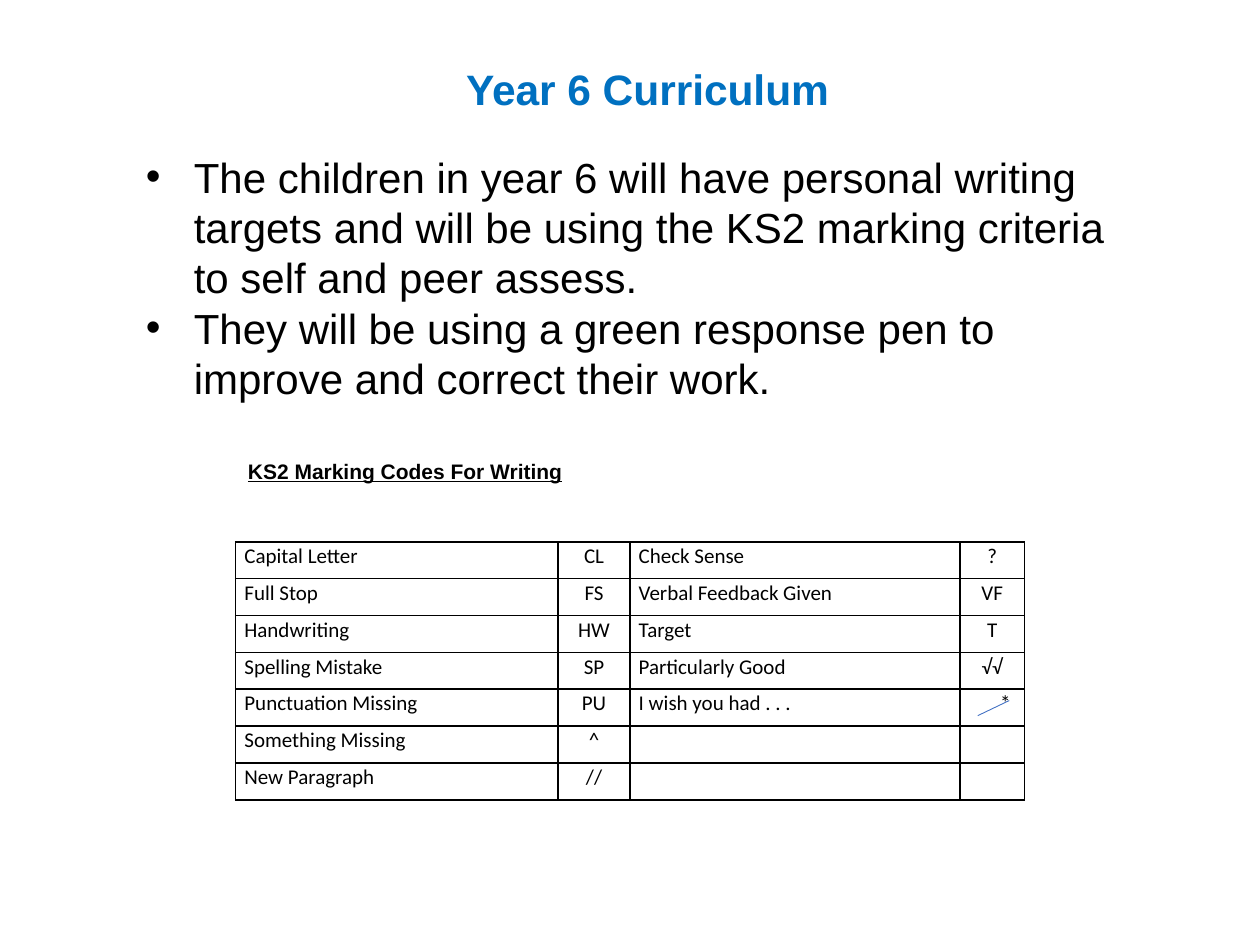
from pptx import Presentation
from pptx.dml.color import RGBColor
from pptx.enum.shapes import MSO_CONNECTOR
from pptx.enum.text import MSO_ANCHOR, PP_ALIGN
from pptx.oxml.ns import qn
from pptx.util import Inches, Pt
from lxml import etree

STRAIGHT = MSO_CONNECTOR.STRAIGHT
TOP = MSO_ANCHOR.TOP
LEFT, CENTER, RIGHT = PP_ALIGN.LEFT, PP_ALIGN.CENTER, PP_ALIGN.RIGHT

COLORS = {"title": "0070C0", "text": "000000", "border": "000000", "stroke": "4472C4"}

BULLETS = [
    "The children in year 6 will have personal writing targets and will be using "
    "the KS2 marking criteria to self and peer assess.",
    "They will be using a green response pen to improve and correct their work.",
]
MARKING_CODES = [
    ("Capital Letter", "CL", "Check Sense", "?"),
    ("Full Stop", "FS", "Verbal Feedback Given", "VF"),
    ("Handwriting", "HW", "Target", "T"),
    ("Spelling Mistake", "SP", "Particularly Good", "√√"),
    ("Punctuation Missing", "PU", "I wish you had . . .", "*"),
    ("Something Missing", "^", "", ""),
    ("New Paragraph", "//", "", ""),
]
COLUMN_WIDTHS = [2.56, 0.57, 2.62, 0.51]


def write(paragraph, text, size=12, font="Arial", color="text", bold=False,
          underline=False, align=LEFT, line_spacing=1.0):
    paragraph.alignment = align
    paragraph.line_spacing = line_spacing
    if not text:
        paragraph._p.get_or_add_endParaRPr().set("sz", str(size * 100))
        return
    run = paragraph.add_run()
    run.text = text
    run.font.size = Pt(size)
    run.font.name = font
    run.font.bold = bold
    run.font.underline = underline
    run.font.color.rgb = RGBColor.from_string(COLORS[color])


class SlideBuilder:
    def __init__(self, slide):
        self.slide = slide

    def text(self, box, paragraphs, bullet=False, **style):
        shape = self.slide.shapes.add_textbox(*map(Inches, box))
        frame = shape.text_frame
        frame.word_wrap = True
        frame.vertical_anchor = TOP
        for index, text in enumerate(paragraphs):
            paragraph = frame.add_paragraph() if index else frame.paragraphs[0]
            write(paragraph, text, **style)
            if bullet:
                self.bullet(paragraph)

    def bullet(self, paragraph, indent=0.38):
        properties = paragraph._p.get_or_add_pPr()
        properties.set("marL", str(Inches(indent)))
        properties.set("indent", str(-Inches(indent)))
        etree.SubElement(properties, qn("a:buFont"), typeface="Arial")
        etree.SubElement(properties, qn("a:buChar"), char="•")

    def table(self, left, top, widths, height, rows):
        frame = self.slide.shapes.add_table(
            len(rows), len(widths), Inches(left), Inches(top),
            Inches(sum(widths)), Inches(height))
        table = frame.table
        table.first_row = table.horz_banding = False
        for column, width in zip(table.columns, widths):
            column.width = Inches(width)
        for row_index, row in enumerate(rows):
            for column_index, text in enumerate(row):
                align = CENTER if column_index % 2 else LEFT
                self.cell(table.cell(row_index, column_index), text, align)

    def cell(self, cell, text, align):
        cell.margin_left = cell.margin_right = Inches(0.07)
        cell.margin_top = cell.margin_bottom = 0
        if text == "*":
            align = RIGHT
            cell.margin_right = Inches(0.11)
        write(cell.text_frame.paragraphs[0], text, font="Calibri",
              align=align, line_spacing=1.07)
        properties = cell._tc.get_or_add_tcPr()
        for side in ("lnL", "lnR", "lnT", "lnB"):
            border = etree.SubElement(properties, qn(f"a:{side}"), w=str(Pt(1)))
            fill = etree.SubElement(border, qn("a:solidFill"))
            etree.SubElement(fill, qn("a:srgbClr"), val=COLORS["border"])
        cell.fill.background()

    def line(self, start, end, color, width):
        connector = self.slide.shapes.add_connector(
            STRAIGHT, *map(Inches, start + end))
        connector.line.color.rgb = RGBColor.from_string(COLORS[color])
        connector.line.width = Pt(width)
        etree.SubElement(connector._element.spPr, qn("a:effectLst"))


def main():
    presentation = Presentation()
    presentation.slide_width = Inches(10)
    presentation.slide_height = Inches(7.5)
    builder = SlideBuilder(presentation.slides.add_slide(presentation.slide_layouts[6]))
    builder.text((0.83, 0.5, 8.62, 0.91), ["Year 6 Curriculum"], size=24.3,
                 color="title", bold=True, align=CENTER, line_spacing=0.9)
    builder.table(1.87, 4.3, COLUMN_WIDTHS, 2.05, MARKING_CODES)
    builder.line((7.76, 5.68), (8.01, 5.56), "stroke", 0.5)
    builder.text((1.87, 3.59, 6.26, 0.5), ["KS2 Marking Codes For Writing"],
                 bold=True, underline=True)
    builder.text((1.06, 1.15, 8.11, 2.79), BULLETS, bullet=True, size=24)
    presentation.save("out.pptx")


if __name__ == "__main__":
    main()
